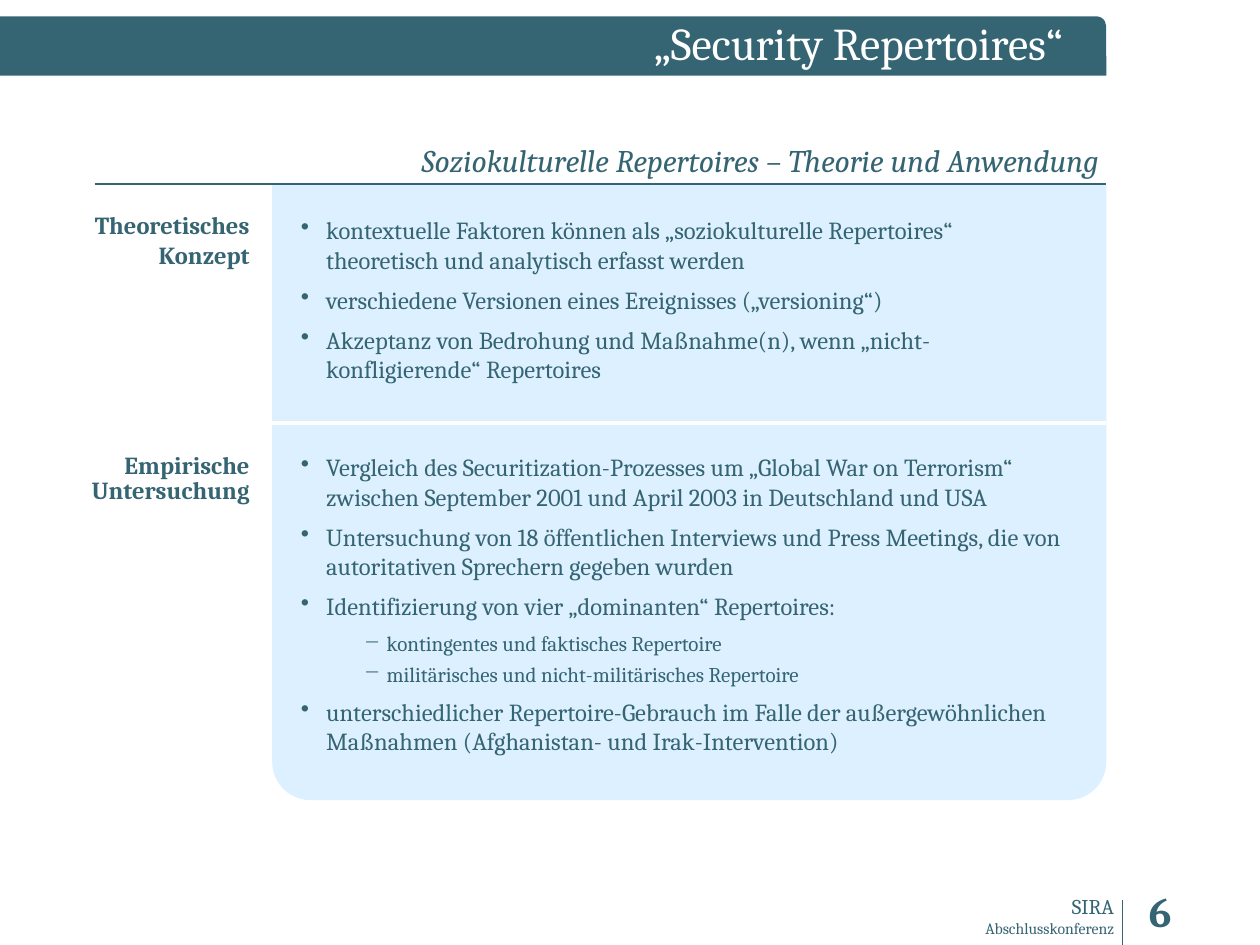
from lxml import etree
from pptx import Presentation
from pptx.dml.color import RGBColor
from pptx.enum.shapes import MSO_CONNECTOR as Connector, MSO_SHAPE as Shape
from pptx.enum.text import MSO_ANCHOR as Anchor, PP_ALIGN as Align
from pptx.oxml.ns import qn
from pptx.util import Inches, Pt

TEAL, PALE, WHITE = "356473", "DDF0FF", "FFFFFF"
FONT = "Cambria"
# level: (bullet, left indent, hanging indent, size)
LEVELS = {1: ("•", 0.2, 0.2, 14), 2: ("−", 0.68, 0.18, 12)}

CONCEPT = [
    (1, "kontextuelle Faktoren können als „soziokulturelle Repertoires“ "
        "theoretisch und analytisch erfasst werden", 6),
    (1, "verschiedene Versionen eines Ereignisses („versioning“)", 6),
    (1, "Akzeptanz von Bedrohung und Maßnahme(n), wenn "
        "„nicht-konfligierende“ Repertoires", 6),
]
STUDY = [
    (1, "Vergleich des Securitization-Prozesses um „Global War on Terrorism“ "
        "zwischen September 2001 und April 2003 in Deutschland und USA", 6),
    (1, "Untersuchung von 18 öffentlichen Interviews und Press Meetings, "
        "die von autoritativen Sprechern gegeben wurden", 6),
    (1, "Identifizierung von vier „dominanten“ Repertoires:", 6),
    (2, "kontingentes und faktisches Repertoire", 3),
    (2, "militärisches und nicht-militärisches Repertoire", 6),
    (1, "unterschiedlicher Repertoire-Gebrauch im Falle der außergewöhnlichen "
        "Maßnahmen (Afghanistan- und Irak-Intervention)", 6),
]


def rgb(color):
    return RGBColor.from_string(color)


def add_panel(slide, kind, x, y, w, h, color):
    sp = slide.shapes.add_shape(kind, Inches(x), Inches(y), Inches(w), Inches(h))
    sp.shadow.inherit = False
    sp.fill.solid()
    sp.fill.fore_color.rgb = rgb(color)
    sp.line.fill.background()
    return sp


def add_line(slide, x1, y1, x2, y2, color, width):
    line = slide.shapes.add_connector(
        Connector.STRAIGHT, Inches(x1), Inches(y1), Inches(x2), Inches(y2))
    line.line.color.rgb = rgb(color)
    line.line.width = Pt(width)
    etree.SubElement(line._element.spPr, qn("a:effectLst"))


def add_frame(slide, x, y, w, h, wrap=True):
    box = slide.shapes.add_textbox(Inches(x), Inches(y), Inches(w), Inches(h))
    tf = box.text_frame
    tf.word_wrap = wrap
    tf.vertical_anchor = Anchor.TOP
    return tf


def add_text(p, text, size, color=TEAL, align=Align.RIGHT, bold=False, italic=False):
    p.alignment = align
    r = p.add_run()
    r.text = text
    r.font.name, r.font.size = FONT, Pt(size)
    r.font.bold, r.font.italic = bold, italic
    r.font.color.rgb = rgb(color)


def set_bullet(p, char, left, hanging):
    pPr = p._p.get_or_add_pPr()
    pPr.set("marL", str(Inches(left)))
    pPr.set("indent", str(-Inches(hanging)))
    color = etree.SubElement(pPr, qn("a:buClr"))
    etree.SubElement(color, qn("a:srgbClr"), val=TEAL)
    etree.SubElement(pPr, qn("a:buChar"), char=char)


def add_bullets(slide, x, y, w, h, items):
    tf = add_frame(slide, x, y, w, h)
    for i, (level, text, after) in enumerate(items):
        p = tf.add_paragraph() if i else tf.paragraphs[0]
        char, left, hanging, size = LEVELS[level]
        set_bullet(p, char, left, hanging)
        p.level = level - 1
        p.space_after = Pt(after)
        add_text(p, text, size, align=Align.LEFT)


def add_title_bar(slide, x, y, w, h):
    add_panel(slide, Shape.ROUND_1_RECTANGLE, x, y, w, h, TEAL)
    tf = add_frame(slide, x + w - 3.89, y - 0.06, 3.65, 0.53, wrap=False)
    add_text(tf.paragraphs[0], "„Security Repertoires“", 26, WHITE)


def add_section(slide, x, y, w, h, label, label_y, spacing, items, items_y):
    """Label to the left of x, bullets inside the panel section."""
    tf = add_frame(slide, x - 1.73, y + label_y, 1.65, 0.55)
    p = tf.paragraphs[0]
    p.line_spacing = spacing
    add_text(p, label, 14, bold=True)
    add_bullets(slide, x + 0.13, y + items_y, w - 0.37, h - 2 * items_y, items)


def add_body(slide, x, y, w, h):
    split = 1.9
    panel = add_panel(slide, Shape.ROUND_2_SAME_RECTANGLE, x, y, w, h, PALE)
    panel.rotation = 180
    panel.adjustments[0], panel.adjustments[1] = 0.062, 0

    # Heading and rule
    tf = add_frame(slide, x + w - 5.8, y - 0.39, 5.84, 0.4, wrap=False)
    add_text(tf.paragraphs[0],
             "Soziokulturelle Repertoires – Theorie und Anwendung", 18, italic=True)
    add_line(slide, x - 1.41, y, x + w, y, TEAL, 1)

    # Two sections with a divider
    add_section(slide, x, y, w, split, "Theoretisches Konzept", 0.16, 1.0,
                CONCEPT, 0.2)
    add_line(slide, x, y + split, x + w, y + split, WHITE, 2.25)
    add_section(slide, x, y + split, w, h - split, "Empirische Untersuchung",
                0.2, 0.85, STUDY, 0.18)


def add_footer(slide, x, y, w, h):
    tf = add_frame(slide, x, y + 0.06, 1.34, 0.45)
    add_text(tf.paragraphs[0], "SIRA", 12)
    add_text(tf.add_paragraph(), "Abschlusskonferenz", 9)
    add_line(slide, x + 1.31, y + 0.16, x + 1.31, y + h, TEAL, 0.75)
    tf = add_frame(slide, x + 1.42, y, w - 1.42, 0.5)
    add_text(tf.paragraphs[0], "6", 24, align=Align.LEFT, bold=True)


def main():
    prs = Presentation()
    prs.slide_width, prs.slide_height = Inches(10), Inches(7.5)
    slide = prs.slides.add_slide(prs.slide_layouts[6])
    add_title_bar(slide, 0, 0.13, 8.78, 0.47)
    add_body(slide, 2.16, 1.46, 6.62, 4.89)
    add_footer(slide, 7.6, 6.98, 2.29, 0.52)
    prs.save("out.pptx")


if __name__ == "__main__":
    main()
